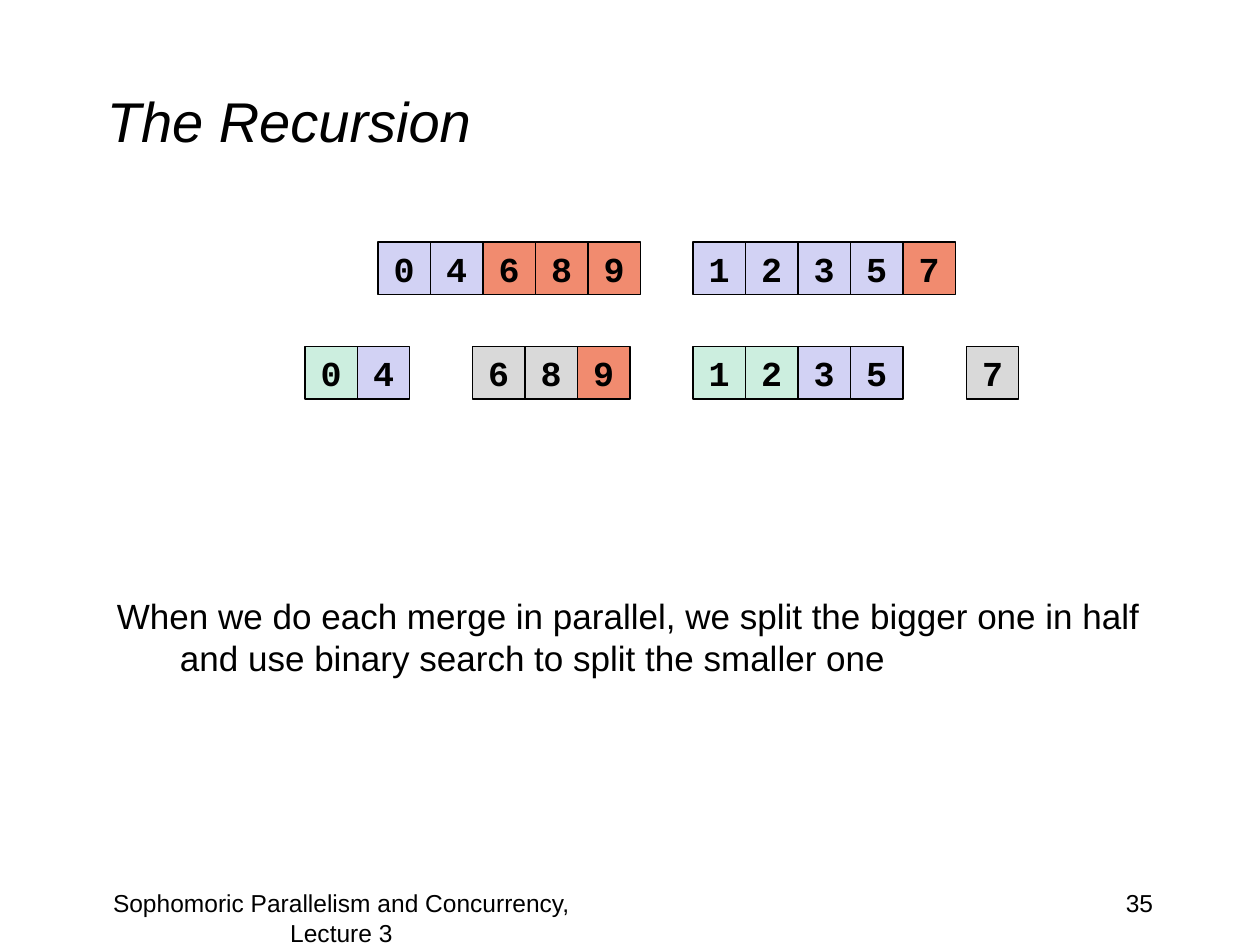
"""Build the slide on the recursive step of a parallel merge."""
from typing import NamedTuple

from pptx import Presentation
from pptx.dml.color import RGBColor
from pptx.enum.shapes import MSO_SHAPE
from pptx.enum.text import MSO_ANCHOR as ANCHOR, PP_ALIGN as ALIGN
from pptx.util import Inches, Pt

BLACK = RGBColor(0x00, 0x00, 0x00)
LILAC = RGBColor(0xD2, 0xD2, 0xF4)
CORAL = RGBColor(0xF1, 0x8B, 0x6F)
MINT = RGBColor(0xCC, 0xEE, 0xDF)
GRAY = RGBColor(0xD9, 0xD9, 0xD9)

CELL = 5 / 12
TOP_ROW, SPLIT_ROW = 1.92, 2.75


class Run(NamedTuple):
    digits: str
    color: RGBColor


class Array(NamedTuple):
    left: float
    top: float
    runs: tuple[Run, ...]


class Label(NamedTuple):
    text: str
    box: tuple[float, float, float, float]
    size: int
    align: ALIGN = ALIGN.LEFT
    anchor: ANCHOR = ANCHOR.TOP
    italic: bool = False
    hanging: float = 0
    before: int = 0


ARRAYS = (
    Array(3, TOP_ROW, (Run("04", LILAC), Run("689", CORAL))),
    Array(5.5, TOP_ROW, (Run("1235", LILAC), Run("7", CORAL))),
    Array(2.42, SPLIT_ROW, (Run("0", MINT), Run("4", LILAC))),
    Array(3.75, SPLIT_ROW, (Run("68", GRAY), Run("9", CORAL))),
    Array(5.5, SPLIT_ROW, (Run("12", MINT), Run("35", LILAC))),
    Array(7.67, SPLIT_ROW, (Run("7", GRAY),)),
)

LABELS = (
    Label("The Recursion", (0.75, 0.33, 8.5, 1.25), 32,
          anchor=ANCHOR.MIDDLE, italic=True),
    Label("When we do each merge in parallel, we split the bigger one in half "
          "and use binary search to split the smaller one",
          (0.83, 4.67, 8.67, 1.92), 20, hanging=0.5, before=4),
    Label("Sophomoric Parallelism and Concurrency, Lecture 3",
          (0.5, 7, 4.42, 0.5), 14, ALIGN.CENTER),
    Label("35", (7.17, 7, 2.08, 0.5), 14, ALIGN.RIGHT),
)


def set_font(p, name: str, size: int) -> None:
    """Give a paragraph its black font."""
    p.font.name = name
    p.font.size = Pt(size)
    p.font.color.rgb = BLACK


def add_label(s, label: Label) -> None:
    """Add one wrapped text box."""
    tf = s.shapes.add_textbox(*map(Inches, label.box)).text_frame
    tf.word_wrap = True
    tf.vertical_anchor = label.anchor
    p = tf.paragraphs[0]
    p.text = label.text
    p.alignment = label.align
    set_font(p, "Arial", label.size)
    p.font.italic = label.italic
    if label.before:
        p.space_before = Pt(label.before)
    if label.hanging:
        pPr = p._p.get_or_add_pPr()
        pPr.set("marL", str(Inches(label.hanging)))
        pPr.set("indent", str(-Inches(label.hanging)))


def add_cell(s, left: float, top: float, digit: str, color: RGBColor) -> None:
    """Add one array element."""
    sp = s.shapes.add_shape(MSO_SHAPE.RECTANGLE, Inches(left), Inches(top),
                            Inches(CELL), Inches(CELL))
    sp.shadow.inherit = False
    sp.fill.solid()
    sp.fill.fore_color.rgb = color
    sp.line.color.rgb = BLACK
    sp.line.width = Pt(0.75)
    tf = sp.text_frame
    tf.word_wrap = False
    tf.vertical_anchor = ANCHOR.MIDDLE
    p = tf.paragraphs[0]
    p.text = digit
    p.alignment = ALIGN.CENTER
    set_font(p, "Courier New", 20)
    p.font.bold = True


def add_array(s, array: Array) -> None:
    """Add a row of touching cells."""
    cells = [(digit, run.color) for run in array.runs for digit in run.digits]
    for i, (digit, color) in enumerate(cells):
        add_cell(s, array.left + i * CELL, array.top, digit, color)


def main() -> None:
    """Build and save the slide."""
    prs = Presentation()
    prs.slide_width, prs.slide_height = Inches(10), Inches(7.5)
    s = prs.slides.add_slide(prs.slide_layouts[6])
    for label in LABELS:
        add_label(s, label)
    for array in ARRAYS:
        add_array(s, array)
    prs.save("out.pptx")


if __name__ == "__main__":
    main()
